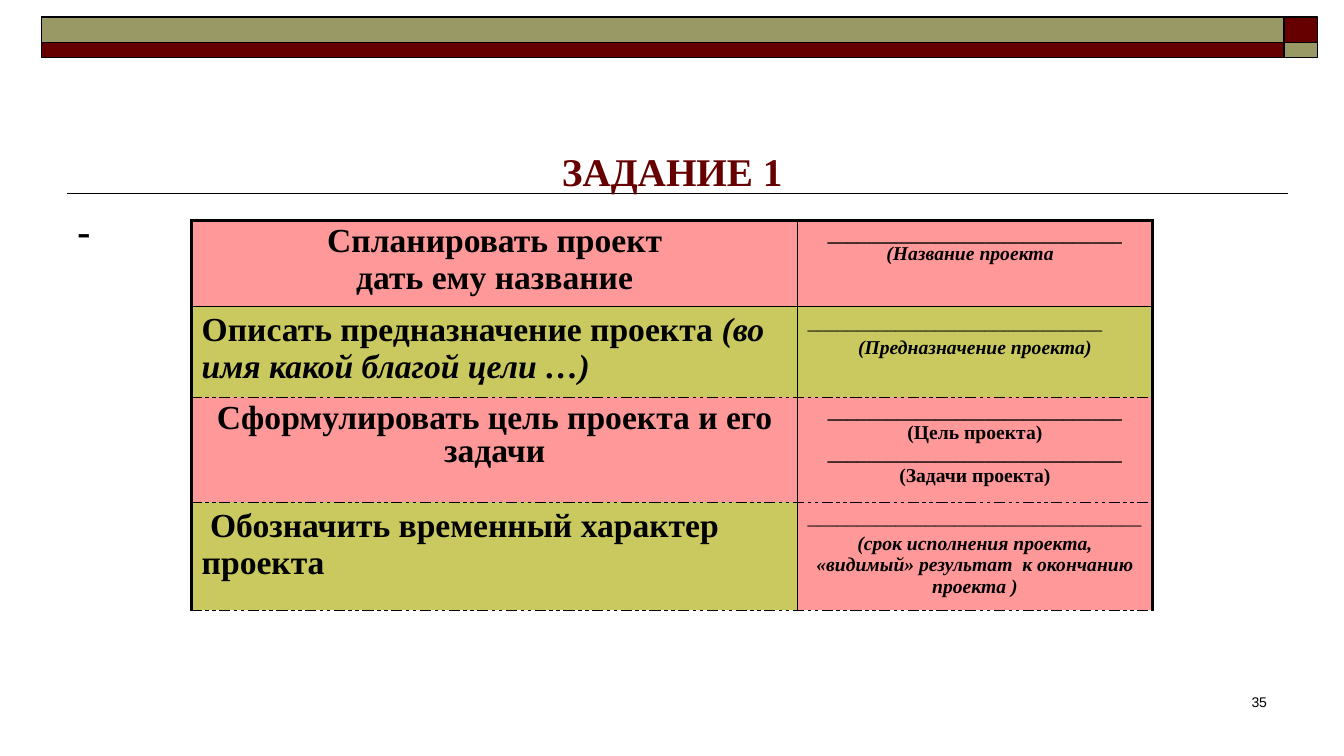
from dataclasses import dataclass, field

from lxml import etree
from pptx import Presentation
from pptx import util as u
from pptx.dml import color
from pptx.enum import shapes, text
from pptx.oxml import ns

BLACK, MAROON, OLIVE = "000000", "660000", "999966"
PINK, LIME = "FF9999", "C9C960"
SERIF = "Times New Roman"
CENTER, LEFT, RIGHT = text.PP_ALIGN.CENTER, text.PP_ALIGN.LEFT, text.PP_ALIGN.RIGHT
BLANK_LINE = "_" * 30


@dataclass
class Run:
    words: str
    size: float = 14
    bold: bool = True
    italic: bool = False
    font: str = SERIF
    color: str = BLACK


@dataclass
class Para:
    runs: list[Run]
    format: dict = field(default_factory=dict)


@dataclass
class Box:
    left: float
    top: float
    width: float
    height: float


@dataclass
class Entry:
    paras: list[Para]
    fill: str


def rgb(value: str) -> color.RGBColor:
    return color.RGBColor.from_string(value)


def apply(target: object, values: dict) -> None:
    for name, value in values.items():
        setattr(target, name, value)


def tight(*runs: Run) -> Para:
    before = runs[0].size * 0.1
    return Para(list(runs), {"alignment": CENTER, "line_spacing": 0.9, "space_before": u.Pt(before)})


def loose(*runs: Run, alignment=LEFT) -> Para:
    before = runs[0].size * 0.2
    return Para(list(runs), {"alignment": alignment, "space_before": u.Pt(before)})


def write(frame, paras: list[Para]) -> None:
    for index, para in enumerate(paras):
        paragraph = frame.add_paragraph() if index else frame.paragraphs[0]
        apply(paragraph, para.format)
        for part in para.runs:
            run = paragraph.add_run()
            run.text = part.words
            apply(run.font, {"size": u.Pt(part.size), "bold": part.bold,
                             "italic": part.italic, "name": part.font})
            run.font.color.rgb = rgb(part.color)


def place(box: Box) -> list[int]:
    return [u.Cm(v) for v in (box.left, box.top, box.width, box.height)]


def add_text(slide, box: Box, para: Para, anchor=text.MSO_ANCHOR.TOP) -> None:
    frame = slide.shapes.add_textbox(*place(box)).text_frame
    apply(frame, {"word_wrap": True, "vertical_anchor": anchor})
    write(frame, [para])


def add_band(slide, box: Box, fill: str) -> None:
    band = slide.shapes.add_shape(shapes.MSO_SHAPE.RECTANGLE, *place(box))
    band.shadow.inherit = False
    band.fill.solid()
    band.fill.fore_color.rgb = rgb(fill)
    band.line.color.rgb = rgb(BLACK)
    band.line.width = u.Pt(1)


def add_rule(slide, left: float, right: float, y: float) -> None:
    rule = slide.shapes.add_connector(
        shapes.MSO_CONNECTOR.STRAIGHT, u.Cm(right), u.Cm(y), u.Cm(left), u.Cm(y))
    rule.line.color.rgb = rgb(BLACK)
    rule.line.width = u.Pt(1)
    etree.SubElement(rule.element.spPr, ns.qn("a:effectLst"))


def set_borders(cell, borders: dict[str, tuple[float, str]]) -> None:
    properties = cell._tc.get_or_add_tcPr()
    for index, (side, (width, dash)) in enumerate(borders.items()):
        line = etree.Element(ns.qn(f"a:ln{side}"), w=str(int(u.Pt(width))))
        fill = etree.SubElement(line, ns.qn("a:solidFill"))
        etree.SubElement(fill, ns.qn("a:srgbClr"), val=BLACK)
        etree.SubElement(line, ns.qn("a:prstDash"), val=dash)
        properties.insert(index, line)


def add_task_table(slide, box: Box, widths: list[float], heights: list[float],
                   entries: list[list[Entry]]) -> None:
    table = slide.shapes.add_table(len(heights), len(widths), *place(box)).table
    apply(table, {"first_row": False, "horz_banding": False})
    for column, width in zip(table.columns, widths):
        column.width = u.Cm(width)
    thick, thin, dashed = (2.25, "solid"), (1, "solid"), (1, "sysDashDotDot")
    levels = [thick, thin] + [dashed] * (len(heights) - 1)
    uprights = [thick, thin, thick]
    for r, (height, row) in enumerate(zip(heights, entries)):
        table.rows[r].height = u.Cm(height)
        for c, entry in enumerate(row):
            cell = table.cell(r, c)
            cell.fill.solid()
            cell.fill.fore_color.rgb = rgb(entry.fill)
            write(cell.text_frame, entry.paras)
            set_borders(cell, {"L": uprights[c], "R": uprights[c + 1],
                               "T": levels[r], "B": levels[r + 1]})


TASKS = [
    [Entry([tight(Run("Спланировать проект", 24)), tight(Run("дать ему название", 24))], PINK),
     Entry([tight(Run(BLANK_LINE), Run(" (Название проекта  ", italic=True))], PINK)],
    [Entry([loose(Run("Описать предназначение проекта ", 24),
                  Run("(во имя какой благой цели …)", 24, italic=True))], LIME),
     Entry([loose(Run(BLANK_LINE, bold=False)),
            loose(Run("(Предназначение проекта)", italic=True), alignment=CENTER)], LIME)],
    [Entry([tight(Run("Сформулировать цель проекта и его задачи", 24))], PINK),
     Entry([tight(Run(words)) for words in
            (BLANK_LINE, "(Цель проекта)", BLANK_LINE, "(Задачи проекта)")], PINK)],
    [Entry([loose(Run(" Обозначить временный характер проекта", 24))], LIME),
     Entry([loose(Run("_" * 34, bold=False)),
            loose(Run("(срок исполнения проекта, «видимый» результат  к окончанию проекта )",
                      italic=True), alignment=CENTER)], PINK)],
]


def main() -> None:
    deck = Presentation()
    apply(deck, {"slide_width": u.Cm(33.87), "slide_height": u.Cm(19.05)})
    slide = deck.slides.add_slide(deck.slide_layouts[6])

    add_rule(slide, 1.7, 32.46, 4.88)
    left, split, top = 1.04, 32.36, 0.43
    long, short, upper, lower = split - left, 0.84, 0.64, 0.38
    add_band(slide, Box(split, top, short, upper), MAROON)
    add_band(slide, Box(left, top, long, upper), OLIVE)
    add_band(slide, Box(left, top + upper, long, lower), MAROON)
    add_band(slide, Box(split, top + upper, short, lower), OLIVE)

    add_text(slide, Box(4.24, 3.58, 25.4, 1.45),
             Para([Run("ЗАДАНИЕ 1", 28, color=MAROON)], {"alignment": CENTER}),
             text.MSO_ANCHOR.BOTTOM)
    add_text(slide, Box(1.7, 5.08, 14.96, 11.94),
             Para([Run("-", 28)], {"space_before": u.Pt(8.4)}))
    heights = [2.01, 2.13, 2.64, 2.54]
    widths = [15.27, 8.94]
    add_task_table(slide, Box(4.83, 5.56, sum(widths), sum(heights)), widths, heights, TASKS)
    add_text(slide, Box(25.12, 17.35, 7.06, 1.27),
             Para([Run("35", 10, bold=False, font="Arial")], {"alignment": RIGHT}))
    deck.save("out.pptx")


if __name__ == "__main__":
    main()
